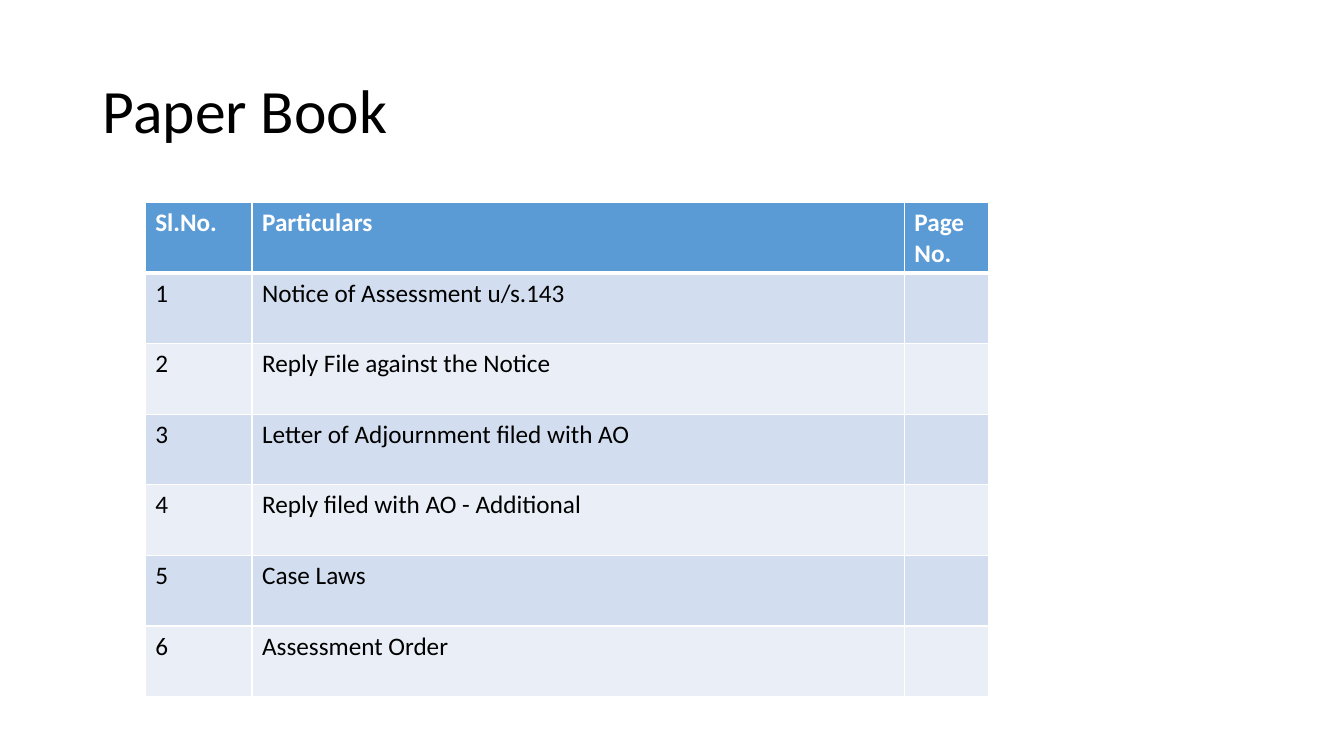
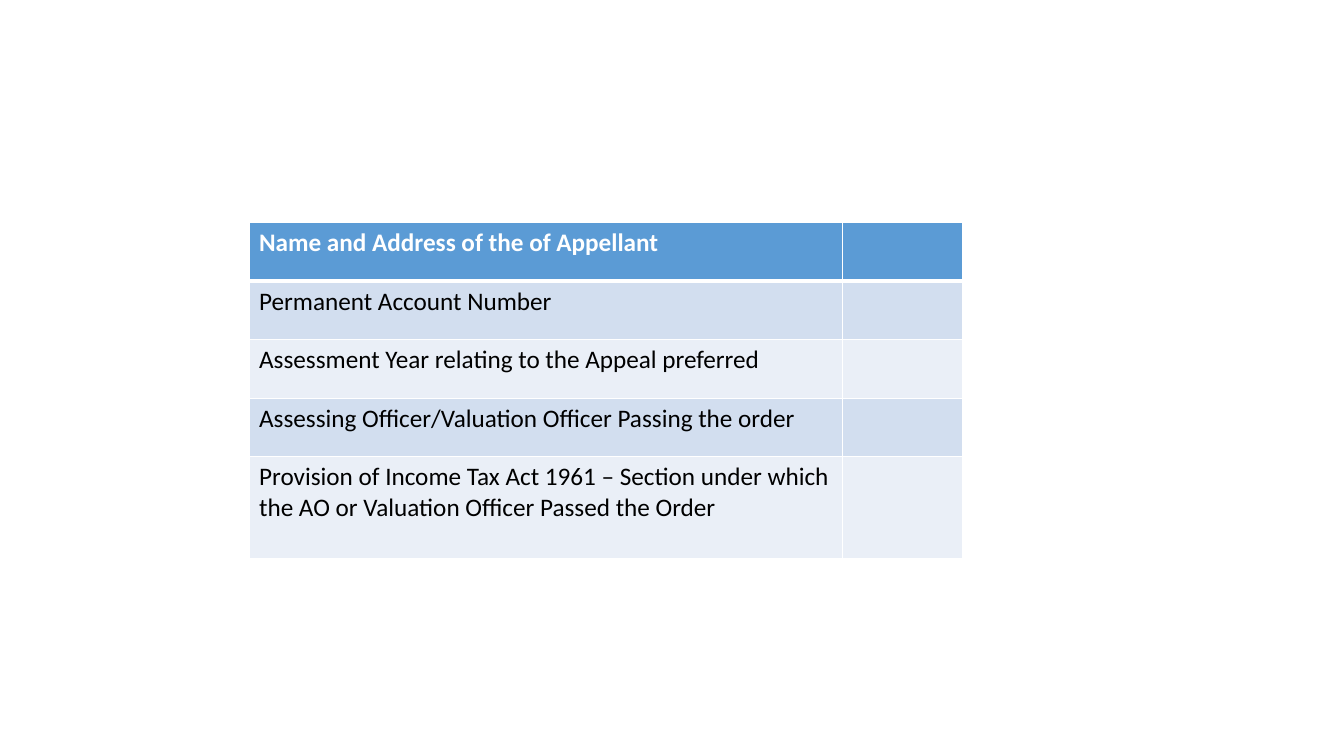
from lxml.etree import SubElement
from pptx import Presentation
from pptx.dml.color import RGBColor
from pptx.enum.text import MSO_ANCHOR
from pptx.oxml.ns import qn
from pptx.util import Inches, Pt

WHITE, BLACK = "FFFFFF", "000000"
HEADER, BANDS = "5B9BD5", ("D2DEEF", "EAEFF7")
TITLE_FONT = {"name": "Calibri", "size": Pt(44), "bold": False}
HEADER_FONT = {"name": "Calibri", "size": Pt(18), "bold": True}
BODY_FONT = {"name": "Calibri", "size": Pt(18), "bold": False}

PAPER_BOOK = [
    ("Sl.No.", "Particulars", "Page No."),
    ("1", "Notice of Assessment u/s.143", ""),
    ("2", "Reply File against the Notice", ""),
    ("3", "Letter of Adjournment filed with AO", ""),
    ("4", "Reply filed with AO - Additional", ""),
    ("5", "Case Laws", ""),
    ("6", "Assessment Order", ""),
]
APPEAL_DETAILS = [
    ("Name and Address of the of Appellant", ""),
    ("Permanent Account Number", ""),
    ("Assessment Year relating to the Appeal preferred", ""),
    ("Assessing Officer/Valuation Officer Passing the order", ""),
    ("Provision of Income Tax Act 1961 – Section under which "
     "the AO or Valuation Officer Passed the Order", ""),
]


def rgb(value):
    """Turn a hex string into a colour."""
    return RGBColor.from_string(value)


def write(p, text, font, color):
    """Add a formatted run to a paragraph."""
    r = p.add_run()
    r.text = text
    for name, value in font.items():
        setattr(r.font, name, value)
    r.font.color.rgb = rgb(color)


def add_title(s, text, left, top, width, height):
    """Place a slide title, centred vertically in its box."""
    sp = s.shapes.add_textbox(*map(Inches, (left, top, width, height)))
    tf = sp.text_frame
    tf.word_wrap = True
    tf.vertical_anchor = MSO_ANCHOR.MIDDLE
    p = tf.paragraphs[0]
    p.line_spacing = 0.9
    write(p, text, TITLE_FONT, BLACK)


def set_borders(cell, widths):
    """Draw white cell borders, given widths in points by side."""
    tcPr = cell._tc.get_or_add_tcPr()
    for side, width in widths.items():
        ln = SubElement(tcPr, qn(f"a:ln{side}"), w=str(Pt(width)))
        fill = SubElement(ln, qn("a:solidFill"))
        SubElement(fill, qn("a:srgbClr"), val=WHITE)


def add_banded_table(s, rows, left, top, widths, heights):
    """Place a table with a blue header and alternating row bands."""
    box = map(Inches, (left, top, sum(widths), sum(heights)))
    table = s.shapes.add_table(len(rows), len(widths), *box).table
    for column, width in zip(table.columns, widths):
        column.width = Inches(width)
    for i, (texts, height) in enumerate(zip(rows, heights)):
        table.rows[i].height = Inches(height)
        is_header = i == 0
        fill = HEADER if is_header else BANDS[(i - 1) % 2]
        font, color = (HEADER_FONT, WHITE) if is_header else (BODY_FONT, BLACK)
        borders = {"L": 1, "R": 1, "T": 3 if i == 1 else 1, "B": 3 if is_header else 1}
        for j, text in enumerate(texts):
            cell = table.cell(i, j)
            set_borders(cell, borders)
            cell.fill.solid()
            cell.fill.fore_color.rgb = rgb(fill)
            if text:
                write(cell.text_frame.paragraphs[0], text, font, color)


def add_slide(prs):
    """Add a blank slide."""
    return prs.slides.add_slide(prs.slide_layouts[6])


def main():
    """Build and save the presentation."""
    prs = Presentation()
    prs.slide_width, prs.slide_height = Inches(13.33), Inches(7.5)

    s = add_slide(prs)
    add_title(s, "Paper Book", 0.92, 0.4, 11.5, 1.45)
    add_banded_table(s, PAPER_BOOK, 1.44, 2.01, [1.06, 6.47, 0.84], [0.7] * 7)

    s = add_slide(prs)
    add_banded_table(s, APPEAL_DETAILS, 2.47, 2.21, [5.89, 1.19], [0.58] * 4 + [1.01])

    prs.save("out.pptx")


if __name__ == "__main__":
    main()
